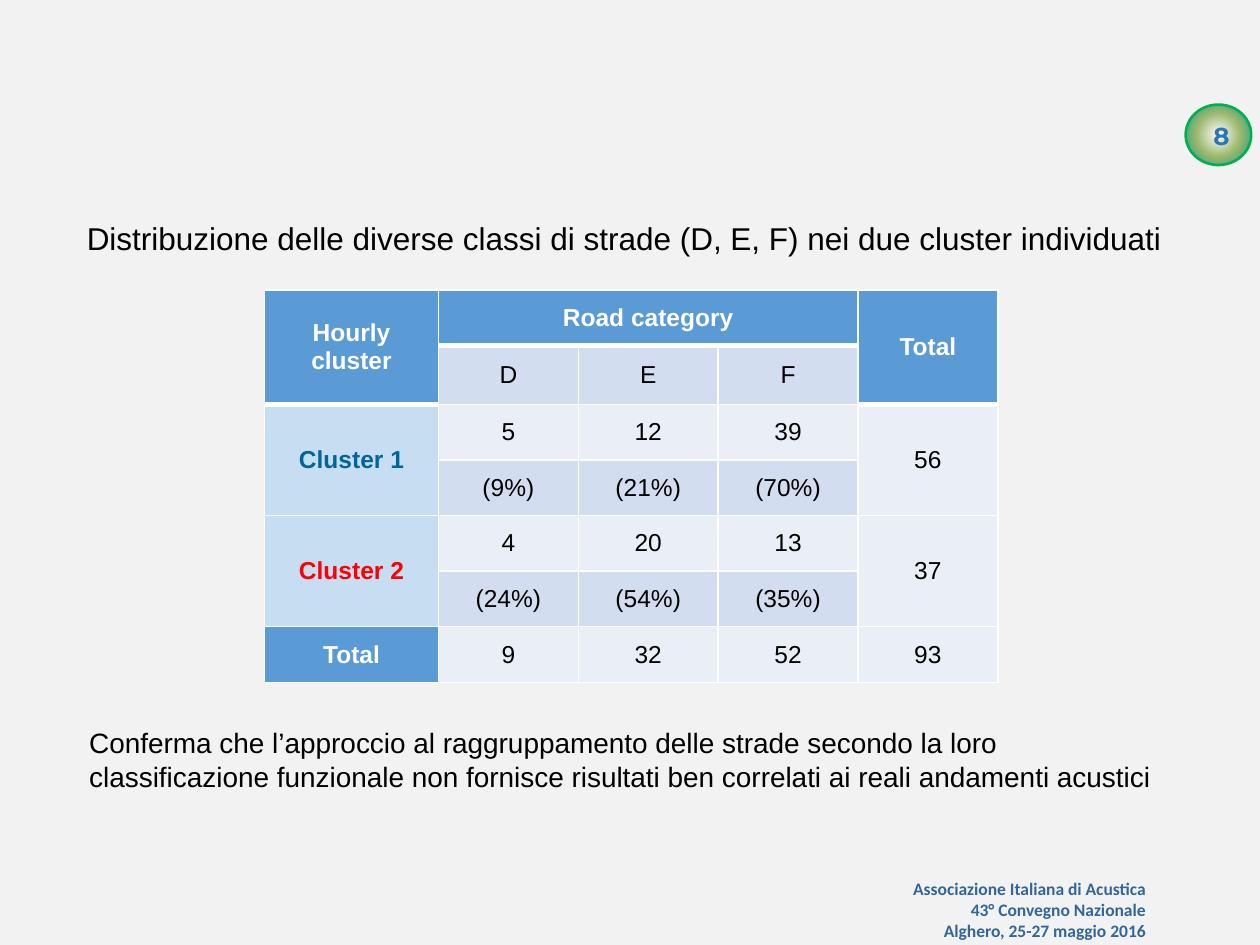
from lxml import etree
from pptx import Presentation
from pptx import util as u
from pptx.dml import color as dml
from pptx.enum import shapes, text
from pptx.oxml import ns

COLORS = {
    "background": "F2F2F2", "black": "000000", "white": "FFFFFF",
    "footer": "336699", "number": "2E75B6", "ring": "00B050",
    "badge_mid": "9CB86E", "badge_edge": "009999",
    "header": "5B9BD5", "band": "D2DEEF", "plain": "EAEFF7",
    "cluster": "C7DDF1", "cluster1": "006699", "cluster2": "FF0000",
}
ROWS = [
    ["Hourly\ncluster", "Road category", "", "", "Total"],
    ["", "D", "E", "F", ""],
    ["Cluster 1", "5", "12", "39", "56"],
    ["", "(9%)", "(21%)", "(70%)", ""],
    ["Cluster 2", "4", "20", "13", "37"],
    ["", "(24%)", "(54%)", "(35%)", ""],
    ["Total", "9", "32", "52", "93"],
]
MERGES = [(0, 1, 0, 3)] + [(r, c, r + 1, c) for r in (0, 2, 4) for c in (0, 4)]
COLUMN_WIDTHS = [1.38] + [1.11] * 4


def rgb(name):
    """Return the named colour."""
    return dml.RGBColor.from_string(COLORS[name])


def sub(parent, tag, **attrs):
    """Add a drawing element with the given attributes."""
    return etree.SubElement(parent, ns.qn("a:" + tag), {k: str(v) for k, v in attrs.items()})


def write(tf, content, color, align, **font):
    """Write lines of text into a frame, one paragraph each."""
    for i, line in enumerate(content.split("\n")):
        p = tf.paragraphs[0] if i == 0 else tf.add_paragraph()
        p.alignment = align
        r = p.add_run()
        r.text = line
        r.font.color.rgb = rgb(color)
        for key, value in font.items():
            setattr(r.font, key, value)


def add_text(s, box, content, color, align=text.PP_ALIGN.LEFT, **font):
    """Add a wrapping text box."""
    tf = s.shapes.add_textbox(*map(u.Inches, box)).text_frame
    tf.word_wrap = True
    write(tf, content, color, align, **font)


def add_badge(s, box, number):
    """Add the round page badge with its number."""
    left, top, width, height = box
    badge = s.shapes.add_shape(shapes.MSO_SHAPE.OVAL, *map(u.Inches, box))
    badge.shadow.inherit = False
    badge.fill.gradient()
    grad = badge._element.spPr.find(ns.qn("a:gradFill"))
    for child in list(grad):
        grad.remove(child)
    stops = sub(grad, "gsLst")
    for pos, name in ((0, "white"), (50, "badge_mid"), (100, "badge_edge")):
        sub(sub(stops, "gs", pos=pos * 1000), "srgbClr", val=COLORS[name])
    sub(sub(grad, "path", path="circle"), "fillToRect", l=50000, t=50000, r=50000, b=50000)
    badge.line.color.rgb = rgb("ring")
    badge.line.width = u.Pt(1.5)
    add_text(s, (left + 0.02, top + 0.08, width + 0.01, 0.34), number, "number",
             text.PP_ALIGN.CENTER, name="Montserrat", size=u.Pt(14), bold=True)


def cell_style(row, col):
    """Return fill, text colour and boldness for a table position."""
    if row == 0 or (row == 1 and col in (0, 4)) or (row == 6 and col == 0):
        return "header", "white", True
    if col == 0:
        return "cluster", "cluster1" if row < 4 else "cluster2", True
    return "band" if row % 2 and col < 4 else "plain", "black", False


def add_borders(cell, row, col):
    """Draw white cell borders, thick below the header cells."""
    heavy = 0 if 1 <= col <= 3 else 1
    widths = {
        "lnL": 1, "lnR": 1,
        "lnT": 3 if row == heavy + 1 else 1,
        "lnB": 3 if row == heavy or (row == 0 and col in (0, 4)) else 1,
    }
    tc_pr = cell._tc.get_or_add_tcPr()
    for tag, width in widths.items():
        line = sub(tc_pr, tag, w=u.Pt(width))
        sub(sub(line, "solidFill"), "srgbClr", val=COLORS["white"])


def add_cluster_table(s, box):
    """Add the table of road categories by cluster."""
    table = s.shapes.add_table(len(ROWS), len(COLUMN_WIDTHS), *map(u.Inches, box)).table
    for column, width in zip(table.columns, COLUMN_WIDTHS):
        column.width = u.Inches(width)
    for row in table.rows:
        row.height = u.Inches(box[3] / len(ROWS))
    layout = {
        "margin_left": u.Inches(0.05), "margin_right": u.Inches(0.05),
        "margin_top": 0, "margin_bottom": 0,
        "vertical_anchor": text.MSO_ANCHOR.MIDDLE,
    }
    for r, values in enumerate(ROWS):
        for c, value in enumerate(values):
            cell = table.cell(r, c)
            fill, color, bold = cell_style(r, c)
            for key, setting in layout.items():
                setattr(cell, key, setting)
            add_borders(cell, r, c)
            cell.fill.solid()
            cell.fill.fore_color.rgb = rgb(fill)
            if value:
                write(cell.text_frame, value, color, text.PP_ALIGN.CENTER,
                      name="Arial", size=u.Pt(14), bold=bold)
    for top, left, bottom, right in MERGES:
        table.cell(top, left).merge(table.cell(bottom, right))


def main():
    """Build and save the slide."""
    prs = Presentation()
    prs.slide_width, prs.slide_height = u.Inches(10), u.Inches(7.5)
    s = prs.slides.add_slide(prs.slide_layouts[6])
    s.background.fill.solid()
    s.background.fill.fore_color.rgb = rgb("background")
    add_text(s, (5.75, 6.92, 3.44, 0.61),
             "Associazione Italiana di Acustica\n43° Convegno Nazionale\nAlghero, 25-27 maggio 2016",
             "footer", text.PP_ALIGN.RIGHT, name="Calibri", size=u.Pt(10), bold=True)
    add_badge(s, (9.41, 0.83, 0.52, 0.48), "8")
    add_text(s, (0.59, 1.69, 8.82, 0.4),
             "Distribuzione delle diverse classi di strade (D, E, F) nei due cluster individuati",
             "black", name="Arial", size=u.Pt(18))
    add_cluster_table(s, (2.1, 2.3, 5.82, 3.09))
    add_text(s, (0.61, 5.71, 8.89, 0.64),
             "Conferma che l’approccio al raggruppamento delle strade secondo la loro "
             "classificazione funzionale non fornisce risultati ben correlati ai reali "
             "andamenti acustici",
             "black", name="Arial", size=u.Pt(16))
    prs.save("out.pptx")


if __name__ == "__main__":
    main()
